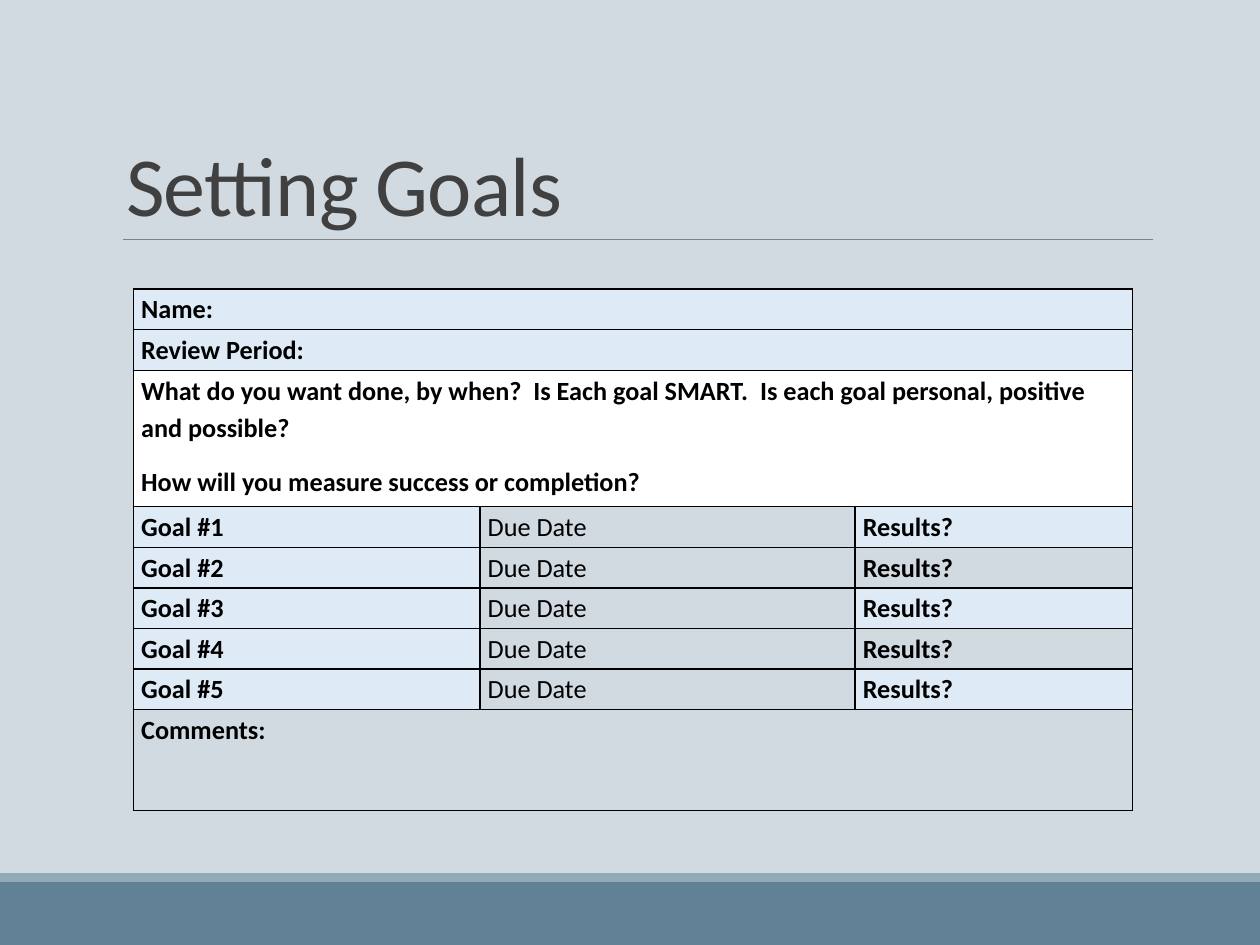
import lxml.etree
import pptx
import pptx.dml.color
import pptx.enum.shapes
import pptx.enum.text
import pptx.oxml.ns
import pptx.util

Pt = pptx.util.Pt
qn = pptx.oxml.ns.qn

COLORS = {
    "background": "D1D9E1",
    "footer": "618197",
    "footer_edge": "92A9B9",
    "rule": "808080",
    "title": "404040",
    "ink": "000000",
    "label": "DEEAF6",
    "question": "FFFFFF",
}
FONT = "Calibri"
SLIDE_WIDTH, SLIDE_HEIGHT = 720, 540


def rgb(name):
    return pptx.dml.color.RGBColor.from_string(COLORS[name])


def write_text(frame, text, size, color, bold=False, line_spacing=1.0,
               space_after=0, tracking=None):
    """Fill a text frame, one paragraph for each line of text."""
    frame.word_wrap = True
    for index, line in enumerate(text.split("\n")):
        para = frame.add_paragraph() if index else frame.paragraphs[0]
        para.line_spacing = line_spacing
        para.space_after = Pt(space_after)
        span = para.add_run()
        span.text = line
        span.font.name = FONT
        span.font.size = Pt(size)
        span.font.bold = bold
        span.font.color.rgb = rgb(color)
        if tracking is not None:
            span.font._element.set("spc", str(int(tracking * 100)))


def set_borders(cell, color, width):
    properties = cell._tc.get_or_add_tcPr()
    for index, side in enumerate(("a:lnL", "a:lnR", "a:lnT", "a:lnB")):
        line = lxml.etree.Element(qn(side), w=str(Pt(width)))
        fill = lxml.etree.SubElement(line, qn("a:solidFill"))
        lxml.etree.SubElement(fill, qn("a:srgbClr"), val=COLORS[color])
        properties.insert(index, line)


class SlideBuilder:
    def __init__(self, slide):
        self.slide = slide
        slide.background.fill.solid()
        slide.background.fill.fore_color.rgb = rgb("background")

    def add_band(self, top, height, color):
        band = self.slide.shapes.add_shape(
            pptx.enum.shapes.MSO_SHAPE.RECTANGLE,
            0, Pt(top), Pt(SLIDE_WIDTH), Pt(height))
        band.shadow.inherit = False
        band.fill.solid()
        band.fill.fore_color.rgb = rgb(color)
        band.line.fill.background()

    def add_rule(self, left, right, top):
        rule = self.slide.shapes.add_connector(
            pptx.enum.shapes.MSO_CONNECTOR.STRAIGHT,
            Pt(left), Pt(top), Pt(right), Pt(top))
        rule.line.color.rgb = rgb("rule")
        rule.line.width = Pt(0.5)
        lxml.etree.SubElement(rule._element.spPr, qn("a:effectLst"))

    def add_title(self, text, left, top, width, height):
        box = self.slide.shapes.add_textbox(
            Pt(left), Pt(top), Pt(width), Pt(height))
        box.text_frame.vertical_anchor = pptx.enum.text.MSO_ANCHOR.BOTTOM
        write_text(box.text_frame, text, 48, "title",
                   line_spacing=0.85, tracking=-0.5)

    def add_table(self, rows, left, top, widths, heights):
        """Rows hold (text, fill, bold) cells; a lone cell spans its row."""
        frame = self.slide.shapes.add_table(
            len(rows), len(widths), Pt(left), Pt(top),
            Pt(sum(widths)), Pt(sum(heights)))
        table = frame.table
        table.first_row = table.horz_banding = False
        for column, width in zip(table.columns, widths):
            column.width = Pt(width)
        for index, (row, height) in enumerate(zip(rows, heights)):
            table.rows[index].height = Pt(height)
            if len(row) == 1:
                table.cell(index, 0).merge(table.cell(index, len(widths) - 1))
            for cell in table.rows[index].cells:
                cell.fill.background()
                set_borders(cell, "ink", 1)
            for column, content in enumerate(row):
                self.fill_cell(table.cell(index, column), *content)

    def fill_cell(self, cell, text, fill, bold):
        cell.margin_left = cell.margin_right = Pt(4.5)
        cell.margin_top = cell.margin_bottom = 0
        if fill:
            cell.fill.solid()
            cell.fill.fore_color.rgb = rgb(fill)
        write_text(cell.text_frame, text, 15, "ink", bold=bold,
                   line_spacing=1.15, space_after=10)


def main():
    deck = pptx.Presentation()
    deck.slide_width, deck.slide_height = Pt(SLIDE_WIDTH), Pt(SLIDE_HEIGHT)
    builder = SlideBuilder(deck.slides.add_slide(deck.slide_layouts[6]))

    builder.add_band(504, 36, "footer")
    builder.add_band(499, 5, "footer_edge")
    builder.add_rule(70.5, 658.8, 136.8)
    builder.add_title("Setting Goals", 65, 22.5, 594, 114.3)

    questions = (
        "What do you want done, by when?  Is Each goal SMART.  "
        "Is each goal personal, positive and possible?\n"
        "How will you measure success or completion?"
    )
    goals = [
        [(f"Goal #{number}", "label", True),
         ("Due Date", None, False),
         ("Results?", "label" if number % 2 else None, True)]
        for number in range(1, 6)
    ]
    rows = [
        [("Name:", "label", True)],
        [("Review Period:", "label", True)],
        [(questions, "question", True)],
        *goals,
        [("Comments:", None, True)],
    ]
    line_height = 23.2
    heights = [line_height] * 2 + [78] + [line_height] * len(goals) + [57.6]
    builder.add_table(rows, 76.2, 165.2, [198, 214.4, 158.6], heights)
    deck.save("out.pptx")


if __name__ == "__main__":
    main()
